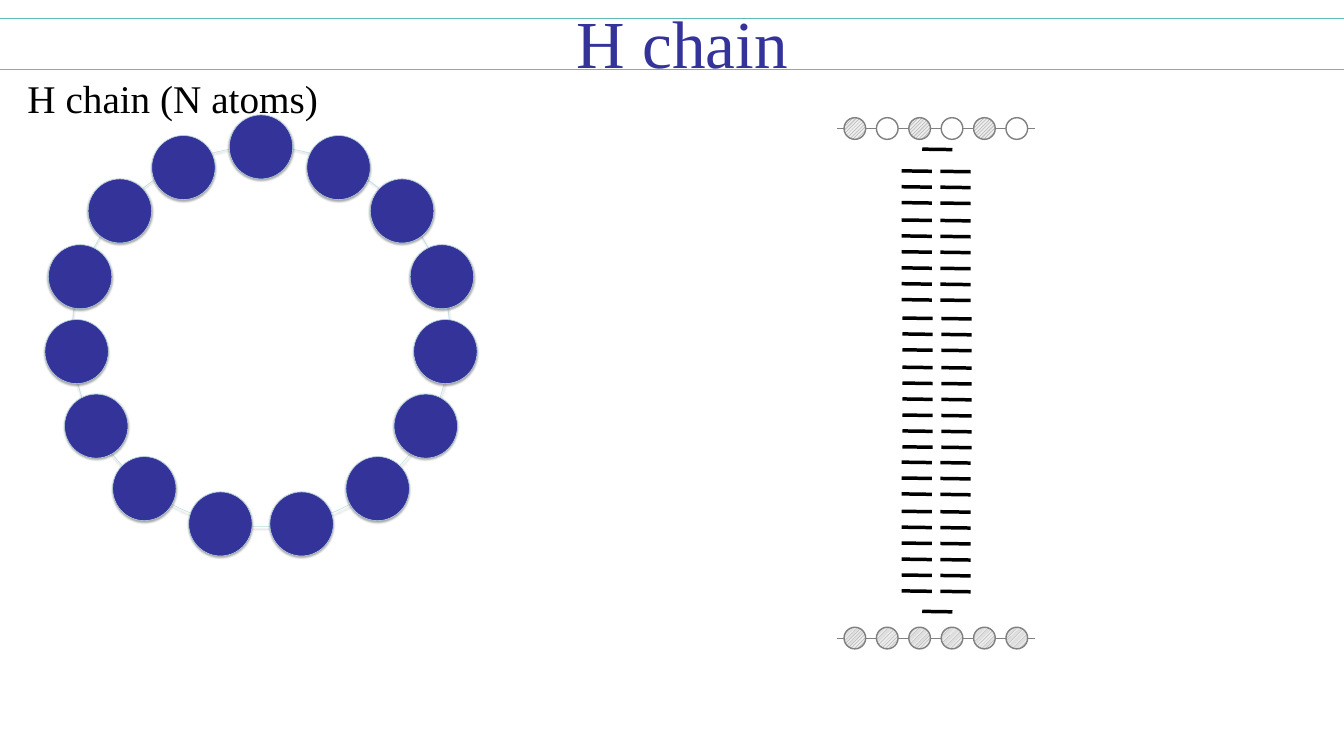
from lxml import etree
from pptx import Presentation
from pptx.dml.color import RGBColor
from pptx.enum.dml import MSO_PATTERN
from pptx.enum.shapes import MSO_CONNECTOR, MSO_SHAPE
from pptx.enum.text import MSO_ANCHOR, MSO_AUTO_SIZE, PP_ALIGN
from pptx.oxml.ns import qn
from pptx.util import Inches, Pt

STRAIGHT = MSO_CONNECTOR.STRAIGHT
OVAL = MSO_SHAPE.OVAL
HATCH = MSO_PATTERN.DARK_UPWARD_DIAGONAL
CENTER = PP_ALIGN.CENTER
MIDDLE = MSO_ANCHOR.MIDDLE
GROW = MSO_AUTO_SIZE.SHAPE_TO_FIT_TEXT

W, H = Inches(26.67), Inches(15)
FONT = "Times New Roman"
COLORS = {"rule": "5EBDB8", "atom": "333399", "edge": "B6DCDF",
          "orbital": "808080", "ink": "000000", "paper": "FFFFFF"}

# All lengths below are percentages of the slide's width or height.
ATOM = (4.72, 8.47)
TOP_ATOM = (17.06, 15.2)
# Distance from the ring's axis and top edge of each mirrored pair of atoms
ATOM_PAIRS = [(5.77, 17.93), (10.5, 23.67), (13.46, 32.37), (13.72, 42.27),
              (12.26, 52.13), (8.68, 60.4), (3.02, 65.07)]
ORBITAL = (1.61, 2.87)
ORBITAL_STEP = 2.41
LEVEL_W, LEVEL_DROP = 2.25, 0.06
LEVEL_STEP, PAIR_GAP = 2.1, 2.89
# Left and top of each block of nine level pairs, and its three sub-blocks
LEVEL_BLOCKS = [(67.08, 22.6), (67.15, 42.07), (67.08, 61.13)]
TRIPLETS = (0, 6.5, 12.83)


def rgb(name):
    return RGBColor.from_string(COLORS[name])


def x(share):
    return round(W * share / 100)


def y(share):
    return round(H * share / 100)


def add_line(shapes, start, end, color, width):
    c = shapes.add_connector(STRAIGHT, x(start[0]), y(start[1]),
                             x(end[0]), y(end[1]))
    c.line.color.rgb = rgb(color)
    c.line.width = Pt(width)
    etree.SubElement(c._element.spPr, qn("a:effectLst"))


def add_oval(shapes, at, size, line, width, fill=None):
    sp = shapes.add_shape(OVAL, x(at[0]), y(at[1]), x(size[0]), y(size[1]))
    sp.shadow.inherit = False
    sp.line.color.rgb = rgb(line)
    sp.line.width = Pt(width)
    if fill:
        sp.fill.solid()
        sp.fill.fore_color.rgb = rgb(fill)
    else:
        sp.fill.background()
    return sp


def add_soft_shadow(sp):
    effects = sp._element.spPr.find(qn("a:effectLst"))
    shadow = etree.SubElement(effects, qn("a:outerShdw"), blurRad=str(Pt(3.1)),
                              dist=str(Pt(1.8)), dir="5400000", rotWithShape="0")
    color = etree.SubElement(shadow, qn("a:srgbClr"), val=COLORS["ink"])
    etree.SubElement(color, qn("a:alpha"), val="35000")


def add_text(shapes, text, box, size, color, frame):
    left, top, width, height = box
    tf = shapes.add_textbox(x(left), y(top), x(width), y(height)).text_frame
    for name, value in frame.items():
        setattr(tf, name, value)
    p = tf.paragraphs[0]
    p.alignment = CENTER
    r = p.add_run()
    r.text = text
    for name, value in {"name": FONT, "size": Pt(size)}.items():
        setattr(r.font, name, value)
    r.font.color.rgb = rgb(color)


def add_ring(shapes):
    add_soft_shadow(add_oval(shapes, (5.36, 19.4), (28.12, 50.27), "edge", 0.75))
    axis = TOP_ATOM[0]
    spots = [TOP_ATOM]
    for dx, top in ATOM_PAIRS:
        spots += [(axis - dx, top), (axis + dx, top)]
    for spot in spots:
        add_soft_shadow(add_oval(shapes, spot, ATOM, "edge", 0.75, "atom"))


def add_orbitals(shapes, axis, phases):
    """Row of s orbitals: + is hatched, - is empty."""
    add_line(shapes, (62.28, axis), (76.98, axis), "orbital", 0.75)
    for i, phase in enumerate(phases):
        at = (62.8 + i * ORBITAL_STEP, axis - ORBITAL[1] / 2)
        sp = add_oval(shapes, at, ORBITAL, "orbital", 2, "paper")
        sp.rotation = 45.9
        if phase == "+":
            sp.fill.patterned()
            sp.fill.pattern = HATCH
            sp.fill.fore_color.rgb = rgb("orbital")
            sp.fill.back_color.rgb = rgb("paper")


def add_level(shapes, left, top):
    add_line(shapes, (left, top), (left + LEVEL_W, top + LEVEL_DROP), "ink", 5)


def add_levels(shapes):
    # Single lowest and highest levels
    for top in (80.87, 19.73):
        add_level(shapes, 68.62, top)
    # Degenerate pairs in between
    for left, block_top in LEVEL_BLOCKS:
        for offset in TRIPLETS:
            for row in range(3):
                top = block_top + offset + row * LEVEL_STEP
                add_level(shapes, left, top)
                add_level(shapes, left + PAIR_GAP, top + LEVEL_DROP)


def main():
    prs = Presentation()
    prs.slide_width, prs.slide_height = W, H
    s = prs.slides.add_slide(prs.slide_layouts[6])

    # Heading between two rules
    add_line(s.shapes, (-1.42, 2.47), (100.3, 2.47), "rule", 1)
    add_line(s.shapes, (-0.97, 9.2), (100.71, 9.2), "rule", 1)
    margins = dict.fromkeys(("margin_left", "margin_top",
                             "margin_right", "margin_bottom"), 0)
    add_text(s.shapes, "H chain", (42.86, 0.13, 15.82, 10.8), 96, "atom",
             {"word_wrap": False, "auto_size": GROW,
              "vertical_anchor": MIDDLE, **margins})
    add_text(s.shapes, "H chain (N atoms)", (-0.45, 9.53, 26.62, 6.93), 56, "ink",
             {"word_wrap": True, "auto_size": GROW})

    # Cyclic chain of atoms
    add_ring(s.shapes)

    # Energy levels between bonding and antibonding combinations
    diagram = s.shapes.add_group_shape().shapes
    add_orbitals(diagram, 84.4, "++++++")
    add_orbitals(diagram, 17, "+-+-+-")
    add_levels(diagram)

    prs.save("out.pptx")


if __name__ == "__main__":
    main()
